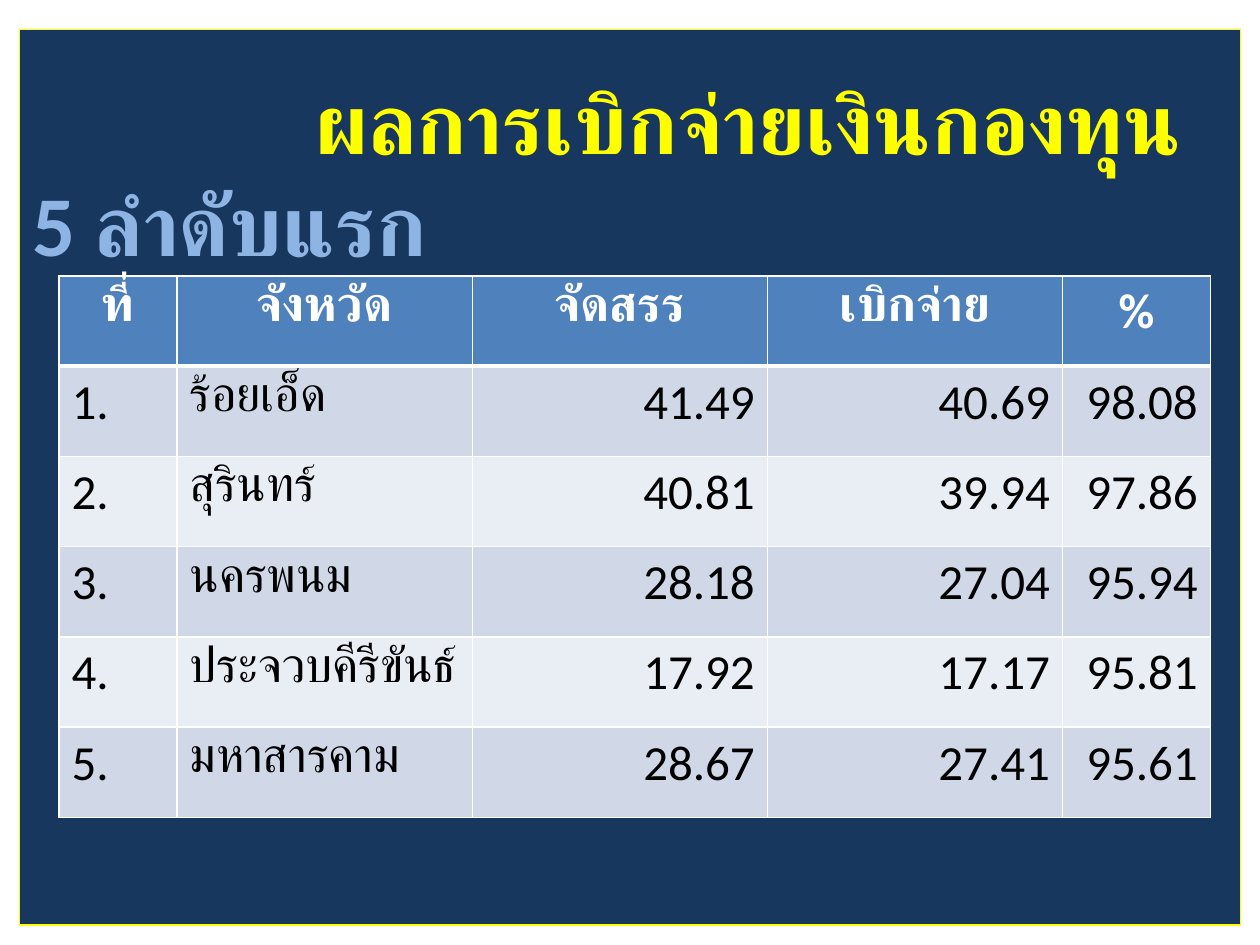
from dataclasses import dataclass

from lxml.etree import SubElement
from pptx import Presentation
from pptx.dml.color import RGBColor
from pptx.enum.text import MSO_ANCHOR, MSO_AUTO_SIZE, PP_ALIGN
from pptx.oxml.ns import qn
from pptx.util import Cm, Pt


@dataclass(frozen=True)
class Theme:
    """Fonts, type sizes in points and colours."""
    font: str = "Calibri"
    head: float = 48.6
    body: float = 28
    navy: str = "17375E"
    gold: str = "FFFF00"
    sky: str = "8EB4E3"
    blue: str = "4F81BD"
    bands: tuple = ("D0D8E8", "E9EDF4")
    white: str = "FFFFFF"
    black: str = "000000"


def rgb(hue):
    """Turn a hex string into a colour."""
    return RGBColor.from_string(hue)


def apply(item, style):
    """Set each attribute of a dict on an item."""
    for name, value in style.items():
        setattr(item, name, value)


class Deck:
    """Holds the theme and the current slide."""

    def __init__(self, theme):
        """Start a deck with one title-only slide."""
        self.theme = theme
        self.show = Presentation()
        apply(self.show, {"slide_width": Cm(25.4), "slide_height": Cm(19.05)})
        self.slide = self.show.slides.add_slide(self.show.slide_layouts[5])

    def label(self, para, text, size, hue, bold, align):
        """Put one styled run in a paragraph."""
        para.alignment = align
        run = para.add_run()
        run.text = text
        apply(run.font, {"name": self.theme.font, "size": Pt(size), "bold": bold})
        run.font.color.rgb = rgb(hue)

    def title(self, box, lines):
        """Fill the title panel with (text, colour, indent) lines."""
        panel = self.slide.shapes.title
        apply(panel, dict(zip(("left", "top", "width", "height"), map(Cm, box))))
        panel.fill.solid()
        panel.fill.fore_color.rgb = rgb(self.theme.navy)
        panel.line.color.rgb = rgb(self.theme.gold)
        panel.line.width = Pt(0.75)
        frame = panel.text_frame
        apply(frame, {"word_wrap": True, "auto_size": MSO_AUTO_SIZE.NONE,
                      "vertical_anchor": MSO_ANCHOR.TOP, "margin_top": Cm(0.8)})
        for num, (text, hue, indent) in enumerate(lines):
            para = frame.add_paragraph() if num else frame.paragraphs[0]
            self.label(para, text, self.theme.head, hue, True, PP_ALIGN.LEFT)
            para._p.get_or_add_pPr().set("marL", str(Cm(indent)))

    def edge(self, cell, side, width):
        """Draw one white cell border."""
        line = SubElement(cell._tc.get_or_add_tcPr(), qn(f"a:ln{side}"), w=str(Pt(width)))
        fill = SubElement(line, qn("a:solidFill"))
        SubElement(fill, qn("a:srgbClr"), val=self.theme.white)

    def table(self, left, top, widths, tall, rows, aligns):
        """Add a banded table whose first row is the header."""
        look = self.theme
        grid = self.slide.shapes.add_table(
            len(rows), len(widths), Cm(left), Cm(top),
            Cm(sum(widths)), Cm(tall * len(rows))).table
        for col, width in zip(grid.columns, widths):
            col.width = Cm(width)
        for row, texts in enumerate(rows):
            grid.rows[row].height = Cm(tall)
            head = row == 0
            for col, text in enumerate(texts):
                cell = grid.cell(row, col)
                heavy = {0: "B", 1: "T"}.get(row)
                for side in "LRTB":
                    self.edge(cell, side, 3 if side == heavy else 1)
                cell.fill.solid()
                cell.fill.fore_color.rgb = rgb(look.blue if head else look.bands[(row - 1) % 2])
                self.label(cell.text_frame.paragraphs[0], text, look.body,
                           look.white if head else look.black, head,
                           PP_ALIGN.CENTER if head else aligns[col])


def main():
    """Build and save the slide."""
    theme = Theme()
    deck = Deck(theme)
    deck.title((0.4, 0.59, 24.61, 18.06), [
        ("ผลการเบิกจ่ายเงินกองทุน", theme.gold, 5.7),
        ("5 ลำดับแรก", theme.sky, 0),
    ])
    rows = [
        ("ที่", "จังหวัด", "จัดสรร", "เบิกจ่าย", "%"),
        ("1.", "ร้อยเอ็ด", "41.49", "40.69", "98.08"),
        ("2.", "สุรินทร์", "40.81", "39.94", "97.86"),
        ("3.", "นครพนม", "28.18", "27.04", "95.94"),
        ("4.", "ประจวบคีรีขันธ์", "17.92", "17.17", "95.81"),
        ("5.", "มหาสารคาม", "28.67", "27.41", "95.61"),
    ]
    aligns = [PP_ALIGN.LEFT] * 2 + [PP_ALIGN.RIGHT] * 3
    deck.table(1.19, 5.56, (2.38, 5.95, 5.95, 5.95, 2.98), 1.82, rows, aligns)
    deck.show.save("out.pptx")


if __name__ == "__main__":
    main()
